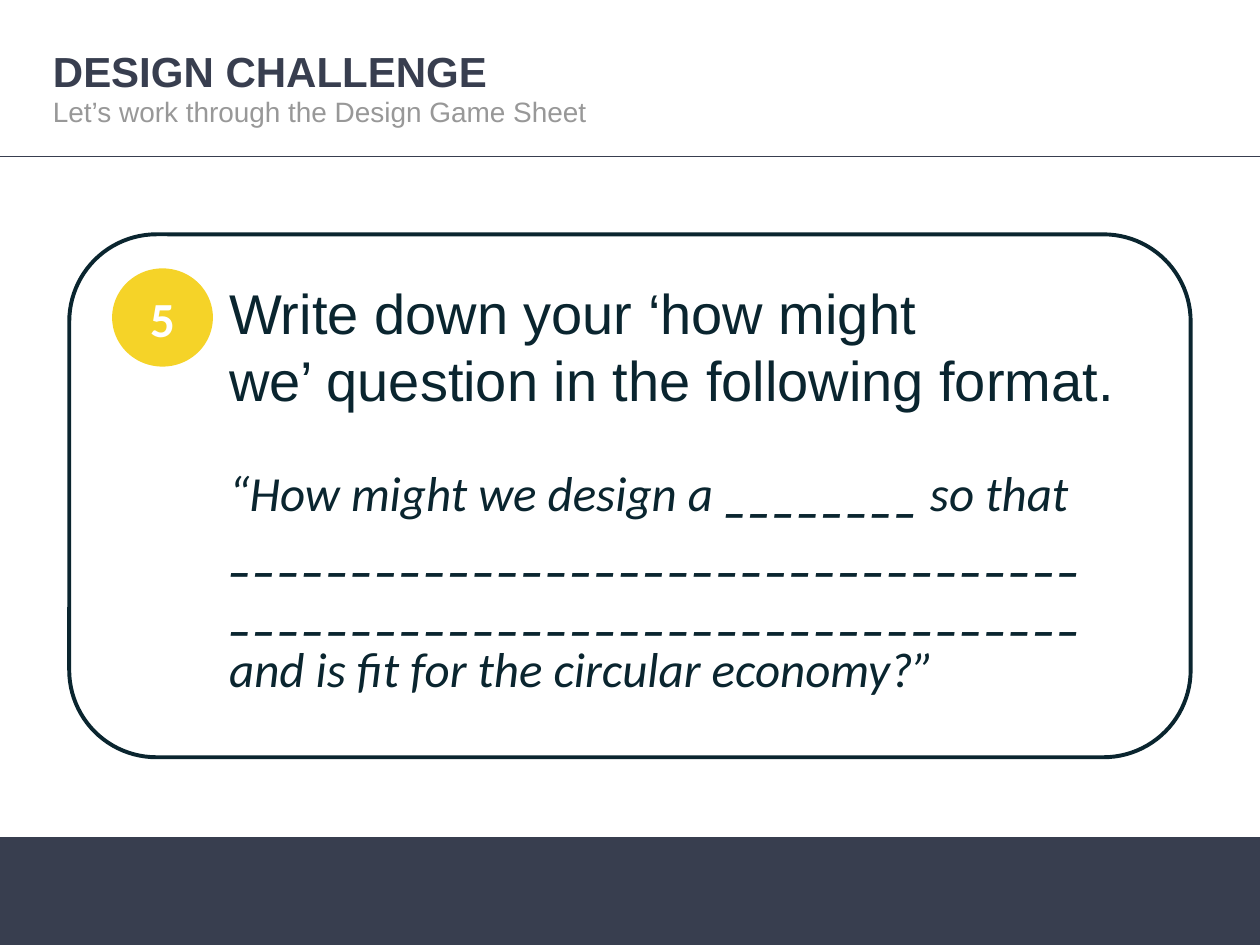
from pptx import Presentation
from pptx.dml.color import RGBColor
from pptx.enum.shapes import MSO_CONNECTOR, MSO_SHAPE
from pptx.enum.text import MSO_ANCHOR, MSO_AUTO_SIZE, PP_ALIGN
from pptx.oxml.ns import qn
from pptx.util import Inches, Pt
from lxml.etree import SubElement

WIDTH, HEIGHT = 10, 7.5
SLATE, GREY, INK = "383E4F", "989898", "0A252F"
YELLOW, WHITE = "F5D328", "FFFFFF"
TEXT_LEFT = 1.72
HEADER_LEFT = 0.32


def color(value):
    return RGBColor.from_string(value)


def place(shape, left, top, width, height):
    shape.left, shape.top = Inches(left), Inches(top)
    shape.width, shape.height = Inches(width), Inches(height)


def format_run(run, font_name, size, fill, bold=False, italic=False):
    font = run.font
    font.name, font.size = font_name, Pt(size)
    font.bold, font.italic = bold, italic
    font.color.rgb = color(fill)


def fill_placeholder(shape, box, text, size, fill, bold=False):
    place(shape, *box)
    frame = shape.text_frame
    frame.text = text
    frame.word_wrap = True
    frame.auto_size = MSO_AUTO_SIZE.NONE
    frame.vertical_anchor = MSO_ANCHOR.TOP
    paragraph = frame.paragraphs[0]
    paragraph.alignment = PP_ALIGN.LEFT
    paragraph.space_before = Pt(0)
    format_run(paragraph.runs[0], "Arial", size, fill, bold)


def add_shape(slide, kind, box, fill, line=None, line_width=0.75):
    shape = slide.shapes.add_shape(kind, *map(Inches, box))
    shape.shadow.inherit = False
    shape.fill.solid()
    shape.fill.fore_color.rgb = color(fill)
    if line:
        shape.line.color.rgb = color(line)
        shape.line.width = Pt(line_width)
    else:
        shape.line.fill.background()
    return shape


def add_rule(slide, top):
    rule = slide.shapes.add_connector(
        MSO_CONNECTOR.STRAIGHT, 0, Inches(top), Inches(WIDTH), Inches(top))
    rule.line.color.rgb = color(SLATE)
    rule.line.width = Pt(0.75)
    SubElement(rule._element.spPr, qn("a:effectLst"))


def add_text(slide, box, lines, font_name, size, italic=False):
    """Each line is a list of text pieces; underscore blanks are bold."""
    frame = slide.shapes.add_textbox(*map(Inches, box)).text_frame
    frame.word_wrap = True
    for index, pieces in enumerate(lines):
        paragraph = frame.add_paragraph() if index else frame.paragraphs[0]
        for piece in pieces:
            run = paragraph.add_run()
            run.text = piece
            format_run(run, font_name, size, INK, piece.startswith("_"), italic)


def add_badge(slide, box, text):
    badge = add_shape(slide, MSO_SHAPE.OVAL, box, YELLOW)
    frame = badge.text_frame
    frame.text = text
    frame.vertical_anchor = MSO_ANCHOR.MIDDLE
    paragraph = frame.paragraphs[0]
    paragraph.alignment = PP_ALIGN.CENTER
    format_run(paragraph.runs[0], "Calibri", 28, WHITE, bold=True)


def main():
    presentation = Presentation()
    presentation.slide_width = Inches(WIDTH)
    presentation.slide_height = Inches(HEIGHT)
    slide = presentation.slides.add_slide(presentation.slide_layouts[0])

    # Header and footer band
    band_height = 0.85
    add_shape(slide, MSO_SHAPE.RECTANGLE,
              (0, HEIGHT - band_height, WIDTH, band_height), SLATE, SLATE)
    add_rule(slide, 1.24)
    fill_placeholder(slide.shapes.title, (HEADER_LEFT, 0.31, 6.11, 0.95),
                     "DESIGN CHALLENGE", 24, SLATE, bold=True)
    fill_placeholder(slide.placeholders[1], (HEADER_LEFT, 0.7, 5.48, 0.7),
                     "Let’s work through the Design Game Sheet", 16, GREY)

    # Challenge card with its numbered instruction
    margin = 0.55
    add_shape(slide, MSO_SHAPE.ROUNDED_RECTANGLE,
              (margin, 1.86, WIDTH - 2 * margin, 4.15), WHITE, INK, 2.25)
    add_text(slide, (TEXT_LEFT, 2.16, 7.73, 1.72),
             [["Write down your ‘how might"],
              ["we’ question in the following format."]], "Arial", 32)
    add_badge(slide, (0.89, 2.13, 0.8, 0.78), "5")

    # Question to fill in
    blank_line = "_" * 35
    add_text(slide, (TEXT_LEFT, 3.62, 7.41, 2.29),
             [["“How might we design a ", "_" * 8, " so that ", blank_line],
              [blank_line],
              ["and is fit for the circular economy?”"]],
             "Calibri", 28, italic=True)

    presentation.save("out.pptx")


if __name__ == "__main__":
    main()
